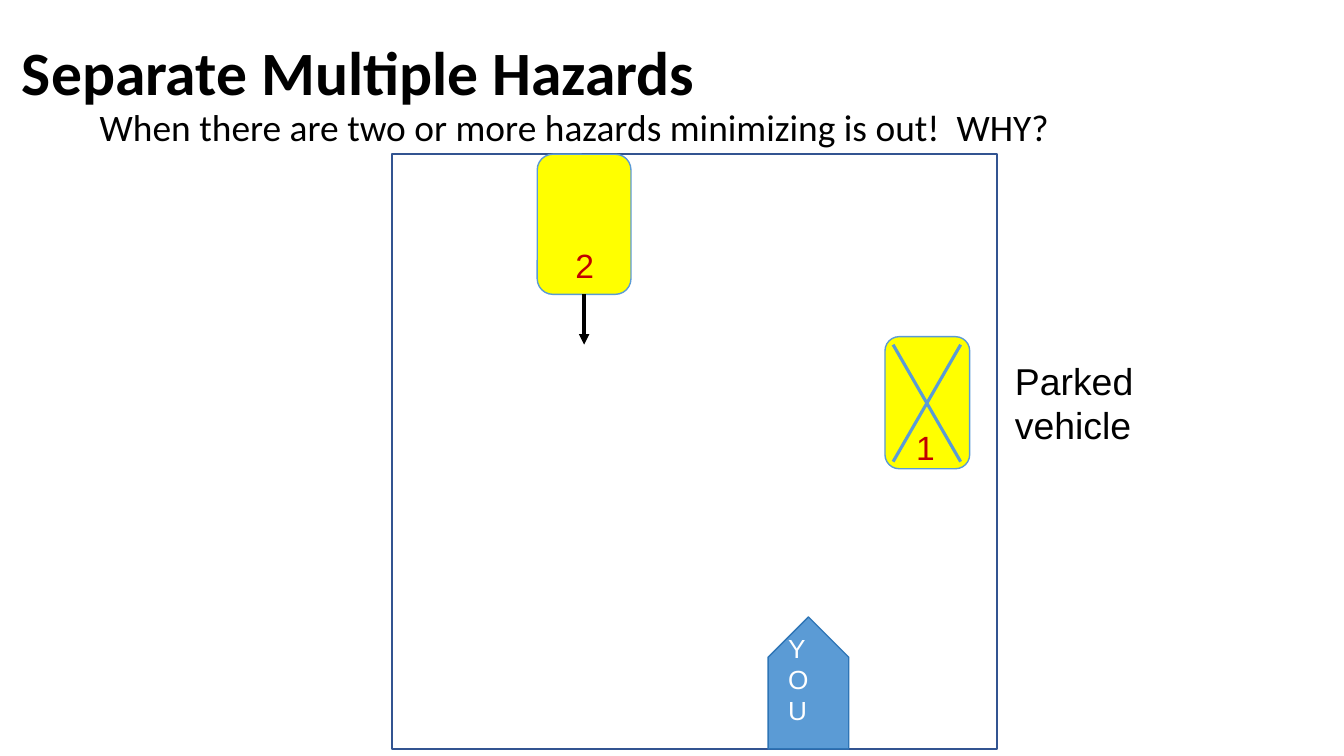
import dataclasses

import lxml.etree
import pptx
import pptx.dml.color
import pptx.enum.shapes
import pptx.enum.text
import pptx.oxml.ns
import pptx.util

SHAPE = pptx.enum.shapes.MSO_SHAPE
ANCHOR = pptx.enum.text.MSO_ANCHOR
qn = pptx.oxml.ns.qn


@dataclasses.dataclass(frozen=True)
class Theme:
    cell: float = 0.1  # inches per grid column and row
    heading_font: str = "Calibri"
    diagram_font: str = "Arial"
    title_size: float = 44
    label_size: float = 26.7
    number_size: float = 24
    you_size: float = 18.7
    black: str = "000000"
    white: str = "FFFFFF"
    red: str = "C00000"
    yellow: str = "FFFF00"
    blue: str = "5B9BD5"
    mid_blue: str = "2E75B6"
    dark_blue: str = "325491"


THEME = Theme()


@dataclasses.dataclass(frozen=True)
class Box:
    """A rectangle measured in grid columns and rows."""
    left: float
    top: float
    width: float
    height: float

    def area(self, column, row, columns, rows):
        return Box(self.left + column, self.top + row, columns, rows)

    @property
    def right(self):
        return self.left + self.width

    @property
    def bottom(self):
        return self.top + self.height

    @property
    def center(self):
        return self.left + self.width / 2

    def lengths(self):
        return [grid(n) for n in (self.left, self.top, self.width, self.height)]


def grid(cells):
    return pptx.util.Inches(cells * THEME.cell)


def rgb(color):
    return pptx.dml.color.RGBColor.from_string(color)


def add_text(slide, box, text, *, size, font=THEME.diagram_font, color=THEME.black,
             bold=False, anchor=ANCHOR.TOP, spacing=1.0, stacked=False):
    label = slide.shapes.add_textbox(*box.lengths())
    frame = label.text_frame
    frame.word_wrap = True
    frame.vertical_anchor = anchor
    if stacked:
        label.element.txBody.find(qn("a:bodyPr")).set("vert", "wordArtVert")
    paragraph = frame.paragraphs[0]
    paragraph.text = text
    paragraph.line_spacing = spacing
    paragraph.font.name = font
    paragraph.font.size = pptx.util.Pt(size)
    paragraph.font.bold = bold
    paragraph.font.color.rgb = rgb(color)


def add_block(slide, preset, box, fill, outline):
    block = slide.shapes.add_shape(preset, *box.lengths())
    block.shadow.inherit = False
    block.fill.solid()
    block.fill.fore_color.rgb = rgb(fill)
    block.line.color.rgb = rgb(outline)
    block.line.width = pptx.util.Pt(1)
    return block


def add_line(slide, start, end, color, width, arrow=False):
    line = slide.shapes.add_connector(
        pptx.enum.shapes.MSO_CONNECTOR.STRAIGHT, *map(grid, start + end))
    line.line.color.rgb = rgb(color)
    line.line.width = pptx.util.Pt(width)
    properties = line.element.spPr
    if arrow:
        lxml.etree.SubElement(properties.find(qn("a:ln")), qn("a:tailEnd"), type="triangle")
    lxml.etree.SubElement(properties, qn("a:effectLst"))


def add_car(slide, box):
    add_block(slide, SHAPE.ROUNDED_RECTANGLE, box, THEME.yellow, THEME.blue)


def add_number(slide, box, number):
    add_text(slide, box, number, size=THEME.number_size, color=THEME.red)


def add_parked_car(slide, box):
    add_car(slide, box)
    inner = box.area(0.8, 0.8, box.width - 1.7, box.height - 1.5)
    for start, end in ((inner.right, inner.left), (inner.left, inner.right)):
        add_line(slide, (start, inner.top), (end, inner.bottom), THEME.blue, 2.25)
    add_number(slide, box.area(2.1, 8.5, 4.2, 5), "1")


def add_oncoming_car(slide, box):
    add_car(slide, box)
    add_number(slide, box.area(2.8, 8.5, 2.3, 5), "2")
    add_line(slide, (box.center, box.bottom), (box.center, box.bottom + 5),
             THEME.black, 2.5, arrow=True)


def add_your_car(slide, box):
    """Place the pentagon on its side, then turn it to point up the road."""
    sideways = box.area((box.width - box.height) / 2, (box.height - box.width) / 2,
                        box.height, box.width)
    add_block(slide, SHAPE.PENTAGON, sideways, THEME.blue, THEME.mid_blue).rotation = 270
    add_text(slide, box.area(1, 1, 5.4, 12.8), "YOU", size=THEME.you_size,
             color=THEME.white, stacked=True)


def add_heading(slide, box):
    add_text(slide, box.area(0, 0, 120, 8.9), "Separate Multiple Hazards",
             size=THEME.title_size, font=THEME.heading_font, bold=True,
             anchor=ANCHOR.MIDDLE, spacing=0.9)
    add_text(slide, box.area(7.7, 7.3, 120, 5.6),
             "When there are two or more hazards minimizing is out!  WHY?",
             size=THEME.label_size, font=THEME.heading_font, spacing=0.9)


def add_road(slide, box):
    add_block(slide, SHAPE.RECTANGLE, box, THEME.white, THEME.dark_blue)
    add_parked_car(slide, box.area(48.9, 18.1, 8.4, 13.1))
    add_oncoming_car(slide, box.area(14.4, 0, 9.3, 13.9))
    add_your_car(slide, box.area(37.3, box.height - 13.1, 8, 13.1))
    add_text(slide, box.area(60.8, 19.7, 22.3, 10), "Parked vehicle",
             size=THEME.label_size)


def main():
    deck = pptx.Presentation()
    page = Box(0, 0, 133.33, 75)
    deck.slide_width, deck.slide_height = grid(page.width), grid(page.height)
    slide = deck.slides.add_slide(deck.slide_layouts[6])
    add_heading(slide, page.area(1.2, 3, 127.7, 12.9))
    add_road(slide, page.area(38.9, 15.3, 60, 59))
    deck.save("out.pptx")


if __name__ == "__main__":
    main()
